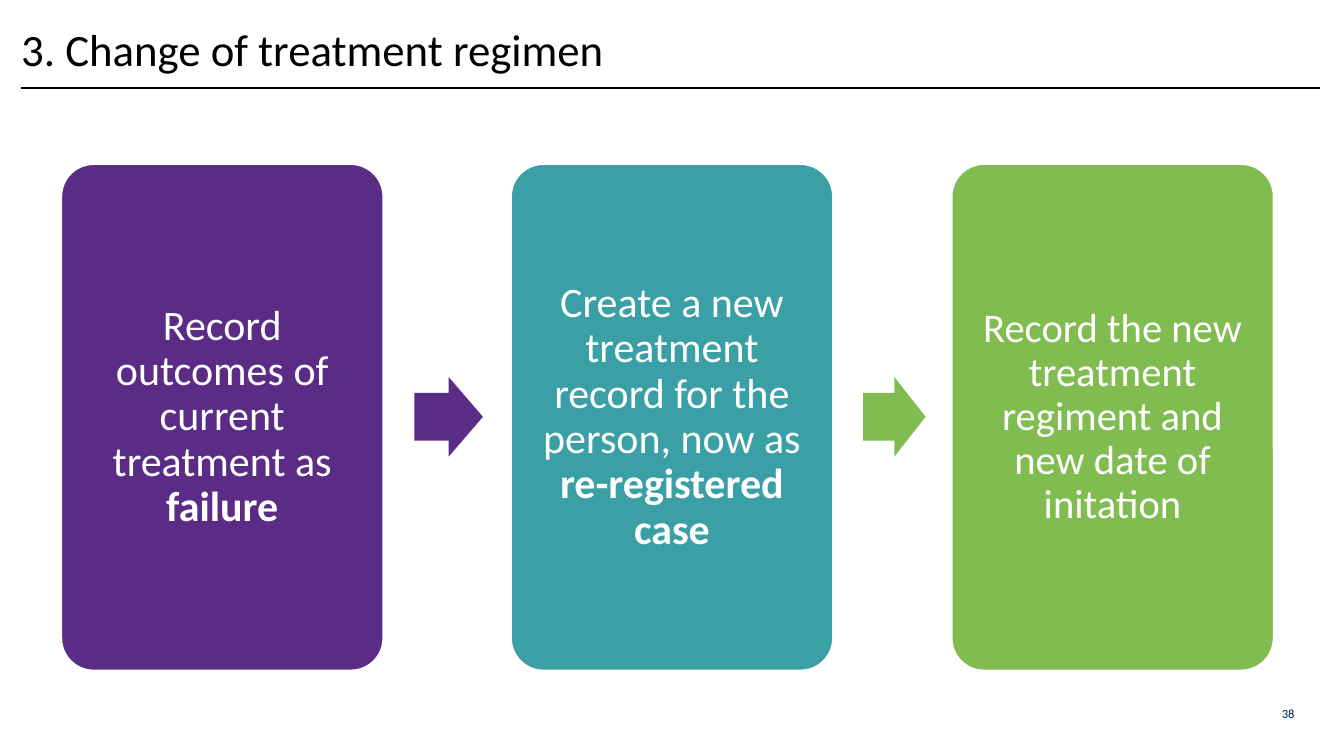
"""Build the slide on changing a treatment regimen: three steps joined by arrows."""
from lxml import etree
from pptx import Presentation
from pptx.dml.color import RGBColor
from pptx.enum.shapes import MSO_CONNECTOR, MSO_SHAPE
from pptx.enum.text import MSO_ANCHOR, PP_ALIGN
from pptx.oxml.ns import qn
from pptx.util import Inches, Pt

STRAIGHT = MSO_CONNECTOR.STRAIGHT
CARD, ARROW = MSO_SHAPE.ROUNDED_RECTANGLE, MSO_SHAPE.RIGHT_ARROW
TOP, MIDDLE = MSO_ANCHOR.TOP, MSO_ANCHOR.MIDDLE
LEFT, CENTER, RIGHT = PP_ALIGN.LEFT, PP_ALIGN.CENTER, PP_ALIGN.RIGHT

BLACK = RGBColor(0x00, 0x00, 0x00)
WHITE = RGBColor(0xFF, 0xFF, 0xFF)
NAVY = RGBColor(0x00, 0x20, 0x5C)
PURPLE = RGBColor(0x5B, 0x2C, 0x86)
TEAL = RGBColor(0x3A, 0xA0, 0xA5)
GREEN = RGBColor(0x80, 0xBC, 0x50)

STEPS = [
    (0.61, PURPLE, 30, "Record outcomes of current treatment as ", "failure"),
    (5.07, TEAL, 30, "Create a new treatment record for the person, now as ", "re-registered case"),
    (9.44, GREEN, 29, "Record the new treatment regiment and new date of initation", ""),
]
ARROWS = [(4.11, 0.68, PURPLE), (8.56, 0.62, GREEN)]


def write(s, texts, size, color, align, anchor, inset=0, spacing=1.0):
    """Fill a shape with one paragraph; the second text is bold."""
    tf = s.text_frame
    tf.word_wrap = True
    tf.vertical_anchor = anchor
    tf.margin_left = tf.margin_right = tf.margin_top = tf.margin_bottom = Inches(inset)
    p = tf.paragraphs[0]
    p.alignment = align
    p.line_spacing = spacing
    p.font.name = "Calibri"
    p.font.size = Pt(size)
    p.font.color.rgb = color
    for i, text in enumerate(texts):
        if text:
            r = p.add_run()
            r.text = text
            r.font.bold = i == 1


def add_block(kind, left, top, width, height, fill):
    """Add a filled preset shape without a shadow."""
    s = slide.shapes.add_shape(kind, Inches(left), Inches(top), Inches(width), Inches(height))
    s.shadow.inherit = False
    s.fill.solid()
    s.fill.fore_color.rgb = fill
    return s


prs = Presentation()
prs.slide_width, prs.slide_height = Inches(13.33), Inches(7.5)
slide = prs.slides.add_slide(prs.slide_layouts[6])

rule = slide.shapes.add_connector(STRAIGHT, Inches(0.21), Inches(0.87), Inches(13.09), Inches(0.87))
rule.line.color.rgb = BLACK
rule.line.width = Pt(1.5)
etree.SubElement(rule._element.spPr, qn("a:effectLst"))

title = slide.shapes.add_textbox(Inches(0.21), Inches(0.09), Inches(12.98), Inches(0.85))
write(title, ["3. Change of treatment regimen"], 32, BLACK, LEFT, MIDDLE, spacing=0.9)

for left, color, size, text, bold_text in STEPS:
    card = add_block(CARD, left, 1.63, 3.19, 5.02, color)
    card.adjustments[0] = 0.1
    card.line.color.rgb = WHITE
    card.line.width = Pt(1)
    write(card, [text, bold_text], size, WHITE, CENTER, MIDDLE, inset=0.12, spacing=0.9)

for left, width, color in ARROWS:
    arrow = add_block(ARROW, left, 3.74, width, 0.79, color)
    arrow.adjustments[0] = 0.6
    arrow.adjustments[1] = 0.5
    arrow.line.fill.background()

number = slide.shapes.add_textbox(Inches(12.42), Inches(7), Inches(0.42), Inches(0.35))
write(number, ["38"], 9, NAVY, RIGHT, TOP)

prs.save("out.pptx")
